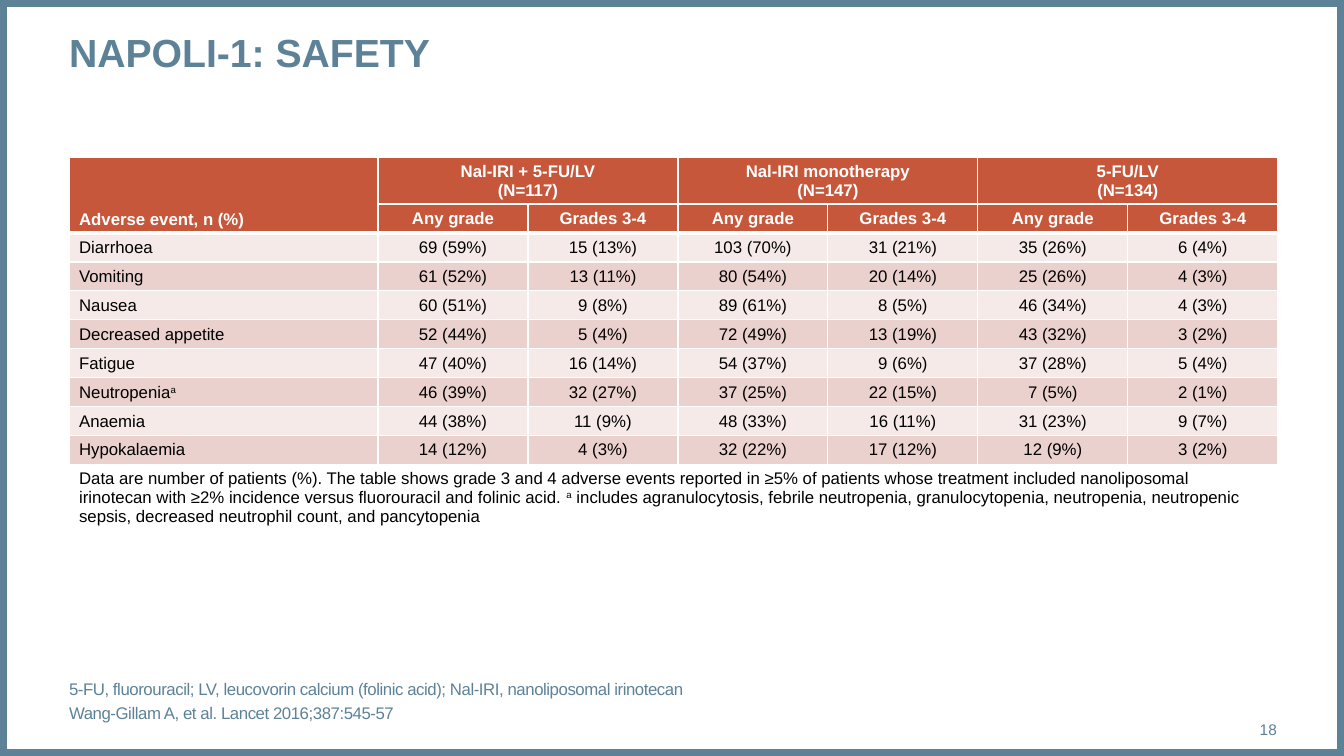
from lxml import etree
from pptx import Presentation
from pptx import util as u
from pptx.dml.color import RGBColor
from pptx.enum import shapes, text
from pptx.oxml.ns import qn

COLORS = {"slate": "5D8298", "rust": "C6573B", "light": "F5EAE8",
          "dark": "EAD1CE", "white": "FFFFFF", "black": "000000"}
LEFT, WIDTH = 69, 1209
LABEL_WIDTH, VALUE_WIDTH = 309, 150
HEADER_ROWS = 2

ARMS = [("Nal-IRI + 5-FU/LV", "(N=117)"), ("Nal-IRI monotherapy", "(N=147)"),
        ("5-FU/LV", "(N=134)")]
GRADES = ["Any grade", "Grades 3-4"]
# Text between carets is superscript
EVENTS = [
    ("Diarrhoea", "69 (59%)", "15 (13%)", "103 (70%)", "31 (21%)", "35 (26%)", "6 (4%)"),
    ("Vomiting", "61 (52%)", "13 (11%)", "80 (54%)", "20 (14%)", "25 (26%)", "4 (3%)"),
    ("Nausea", "60 (51%)", "9 (8%)", "89 (61%)", "8 (5%)", "46 (34%)", "4 (3%)"),
    ("Decreased appetite", "52 (44%)", "5 (4%)", "72 (49%)", "13 (19%)", "43 (32%)", "3 (2%)"),
    ("Fatigue", "47 (40%)", "16 (14%)", "54 (37%)", "9 (6%)", "37 (28%)", "5 (4%)"),
    ("Neutropenia^a^", "46 (39%)", "32 (27%)", "37 (25%)", "22 (15%)", "7 (5%)", "2 (1%)"),
    ("Anaemia", "44 (38%)", "11 (9%)", "48 (33%)", "16 (11%)", "31 (23%)", "9 (7%)"),
    ("Hypokalaemia", "14 (12%)", "4 (3%)", "32 (22%)", "17 (12%)", "12 (9%)", "3 (2%)"),
]
TABLE_NOTE = (
    "Data are number of patients (%). The table shows grade 3 and 4 adverse events reported "
    "in ≥5% of patients whose treatment included nanoliposomal irinotecan with ≥2% incidence "
    "versus fluorouracil and folinic acid. ^a^ includes agranulocytosis, febrile neutropenia, "
    "granulocytopenia, neutropenia, neutropenic sepsis, decreased neutrophil count, and "
    "pancytopenia")
REFERENCES = [
    "5-FU, fluorouracil; LV, leucovorin calcium (folinic acid); Nal-IRI, nanoliposomal irinotecan",
    "Wang-Gillam A, et al. Lancet 2016;387:545-57",
]


def px(value):
    return u.Emu(round(value * 914400 / 100.8))


def rgb(name):
    return RGBColor.from_string(COLORS[name])


class SlideBuilder:
    def __init__(self, slide, font="Arial"):
        self.slide = slide
        self.font = font

    def add_lines(self, frame, lines, size, color, bold=False, align=text.PP_ALIGN.LEFT,
                  space=0, tracking=0):
        for index, line in enumerate(lines):
            paragraph = frame.add_paragraph() if index else frame.paragraphs[0]
            paragraph.alignment = align
            if index and space:
                paragraph.space_before = u.Pt(space)
            font = paragraph.font
            font.name, font.size, font.bold = self.font, u.Pt(size), bold
            font.color.rgb = rgb(color)
            for part, words in enumerate(line.split("^")):
                if not words:
                    continue
                run = paragraph.add_run()
                run.text = words
                if part % 2:
                    run._r.get_or_add_rPr().set("baseline", "30000")
                if tracking:
                    run._r.get_or_add_rPr().set("spc", str(tracking))

    def frame(self, width, height, color, points):
        shape = self.slide.shapes.add_shape(
            shapes.MSO_SHAPE.RECTANGLE, 0, 0, px(width), px(height))
        shape.shadow.inherit = False
        shape.fill.background()
        shape.line.color.rgb = rgb(color)
        shape.line.width = u.Pt(points)

    def fit(self, shape, anchor):
        frame = shape.text_frame
        frame.margin_left = frame.margin_right = frame.margin_top = frame.margin_bottom = 0
        frame.word_wrap = True
        frame.auto_size = text.MSO_AUTO_SIZE.NONE
        frame.vertical_anchor = anchor
        return frame

    def title(self, words, left, top, width, height):
        shape = self.slide.shapes.title
        shape.left, shape.top, shape.width, shape.height = map(px, (left, top, width, height))
        self.add_lines(self.fit(shape, text.MSO_ANCHOR.TOP), [words], 28, "slate", bold=True)

    def text_box(self, lines, left, top, width, height, size, **style):
        shape = self.slide.shapes.add_textbox(*map(px, (left, top, width, height)))
        self.add_lines(self.fit(shape, text.MSO_ANCHOR.MIDDLE), lines, size, "slate", **style)

    def table(self, left, top, columns, rows):
        shape = self.slide.shapes.add_table(
            len(rows), len(columns), px(left), px(top), px(sum(columns)), px(sum(rows)))
        table = shape.table
        table.first_row = table.horz_banding = False
        for column, width in zip(table.columns, columns):
            column.width = px(width)
        for row, height in zip(table.rows, rows):
            row.height = px(height)
        return table

    def borders(self, cell, top=1, bottom=1):
        properties = cell._tc.get_or_add_tcPr()
        for side, points in (("L", 1), ("R", 1), ("T", top), ("B", bottom)):
            line = etree.SubElement(properties, qn(f"a:ln{side}"), w=str(u.Pt(points)))
            fill = etree.SubElement(line, qn("a:solidFill"))
            etree.SubElement(fill, qn("a:srgbClr"), val=COLORS["white"])

    def cell(self, cell, lines, fill, color="black", **style):
        cell.margin_top, cell.margin_bottom = px(5), px(4)
        if fill:
            cell.fill.solid()
            cell.fill.fore_color.rgb = rgb(fill)
        else:
            cell.fill.background()
        self.add_lines(cell.text_frame, lines, 12, color, **style)


def main():
    presentation = Presentation()
    presentation.slide_width, presentation.slide_height = px(1344), px(756)
    slide = presentation.slides.add_slide(presentation.slide_layouts[5])
    builder = SlideBuilder(slide)
    center = text.PP_ALIGN.CENTER

    # Frame and title
    builder.frame(1344, 756, "slate", 10)
    builder.title("NAPOLI-1: SAFETY", LEFT, 28, WIDTH, 95)

    # Table grid with a thick rule under the header
    columns = [LABEL_WIDTH] + [VALUE_WIDTH] * len(ARMS) * len(GRADES)
    rows = [47] + [29] * (1 + len(EVENTS)) + [68]
    table = builder.table(LEFT, 157, columns, rows)
    last = len(rows) - 1
    for row in range(len(rows)):
        for column in range(len(columns)):
            above_rule = row == HEADER_ROWS - 1 or (row, column) == (0, 0)
            builder.borders(table.cell(row, column), top=3 if row == HEADER_ROWS else 1,
                            bottom=3 if above_rule else 1)

    # Table header
    heading = {"fill": "rust", "color": "white", "bold": True}
    corner = table.cell(0, 0)
    corner.merge(table.cell(1, 0))
    corner.vertical_anchor = text.MSO_ANCHOR.BOTTOM
    builder.cell(corner, ["Adverse event, n (%)"], **heading)
    for index, arm in enumerate(ARMS):
        first = 1 + index * len(GRADES)
        table.cell(0, first).merge(table.cell(0, first + 1))
        builder.cell(table.cell(0, first), arm, align=center, **heading)
        for offset, grade in enumerate(GRADES):
            builder.cell(table.cell(1, first + offset), [grade], align=center, **heading)

    # Adverse events and table note
    for row, event in enumerate(EVENTS):
        for column, value in enumerate(event):
            builder.cell(table.cell(row + HEADER_ROWS, column), [value],
                         "dark" if row % 2 else "light",
                         align=center if column else text.PP_ALIGN.LEFT)
    table.cell(last, 0).merge(table.cell(last, len(columns) - 1))
    builder.cell(table.cell(last, 0), [TABLE_NOTE], None)

    # References and slide number
    builder.text_box(REFERENCES, LEFT, 681, 1121, 40, 12, space=3, tracking=-30)
    builder.text_box(["18"], 1190, 709, 87, 40, 11, align=text.PP_ALIGN.RIGHT)

    presentation.save("out.pptx")


if __name__ == "__main__":
    main()
